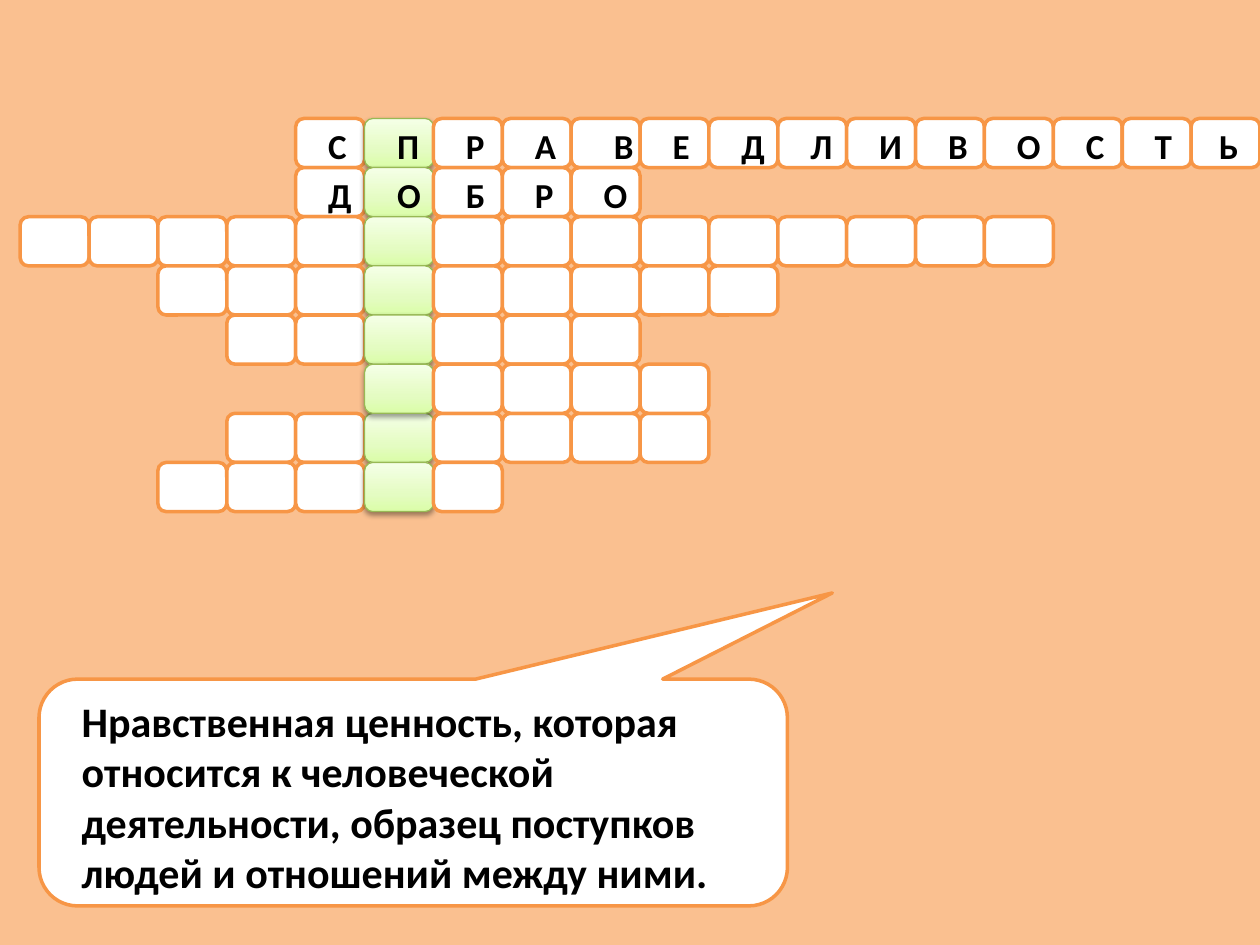
import copy
from dataclasses import dataclass

import pptx
import pptx.dml.color
import pptx.enum.shapes
import pptx.enum.text
import pptx.oxml
import pptx.oxml.ns
import pptx.util

Inches = pptx.util.Inches
Shapes = pptx.enum.shapes.MSO_SHAPE
Align = pptx.enum.text.PP_ALIGN


@dataclass(frozen=True)
class Theme:
    background: str = "FAC090"
    paper: str = "FFFFFF"
    outline: str = "F79646"
    key_outline: str = "98B955"
    key_stops: tuple = ((0, "DAFDA7"), (0.35, "E4FCC2"), (1, "F5FFE7"))
    ink: str = "000000"
    font: str = "Calibri"
    letter_size: int = 20
    clue_size: int = 24
    outline_width: float = 2
    key_outline_width: float = 0.75


@dataclass(frozen=True)
class Box:
    left: float
    top: float
    width: float
    height: float

    def lengths(self):
        return [Inches(v) for v in (self.left, self.top, self.width, self.height)]


THEME = Theme()
COLUMNS = 18
KEY_COLUMN = 5
ROWS = ((4, 14), (4, 5), (0, 15), (2, 9), (3, 6), (5, 5), (3, 7), (2, 5))
STACKING = (0, 1, 2, 3, 4, 6, 7, 5)
WORDS = ("СПРАВЕДЛИВОСТЬ", "ДОБРО")
LETTER_WIDTHS = {(0, 9): 0.31, (0, 11): 0.31, (0, 13): 0.16, (1, 3): 0.31}
LETTER_SHIFTS = {(0, 4): 0.08}
CLUE = (
    "Нравственная ценность, которая относится к человеческой "
    "деятельности, образец поступков людей и отношений между ними."
)
SHADOW = (
    '<a:effectLst xmlns:a="http://schemas.openxmlformats.org/drawingml/2006/main">'
    '<a:outerShdw blurRad="40000" dist="20000" dir="5400000" rotWithShape="0">'
    '<a:srgbClr val="000000"><a:alpha val="38000"/></a:srgbClr>'
    "</a:outerShdw></a:effectLst>"
)


def color(value):
    return pptx.dml.color.RGBColor.from_string(value)


def apply_format(target, values):
    for name, value in values.items():
        setattr(target, name, value)


def add_panel(page, kind, box, outline, width):
    panel = page.shapes.add_shape(kind, *box.lengths())
    panel.shadow.inherit = False
    panel.fill.solid()
    panel.fill.fore_color.rgb = color(THEME.paper)
    panel.line.color.rgb = color(outline)
    panel.line.width = pptx.util.Pt(width)
    return panel


def add_words(page, box, words, size, alignment):
    words_box = page.shapes.add_textbox(*box.lengths())
    frame = words_box.text_frame
    apply_format(frame, {
        "word_wrap": True,
        "auto_size": pptx.enum.text.MSO_AUTO_SIZE.SHAPE_TO_FIT_TEXT,
    })
    para = frame.paragraphs[0]
    para.alignment = alignment
    span = para.add_run()
    span.text = words
    apply_format(span.font, {
        "name": THEME.font, "size": pptx.util.Pt(size), "bold": True,
    })
    span.font.color.rgb = color(THEME.ink)


def add_key_cell(page, box):
    cell = add_panel(page, Shapes.ROUNDED_RECTANGLE, box,
                     THEME.key_outline, THEME.key_outline_width)
    cell.fill.gradient()
    cell.fill.gradient_angle = 90
    properties = cell._element.spPr
    stop_list = properties.find(".//" + pptx.oxml.ns.qn("a:gsLst"))
    stop_list.append(copy.deepcopy(stop_list[0]))
    for stop, (position, value) in zip(cell.fill.gradient_stops, THEME.key_stops):
        stop.position = position
        stop.color.rgb = color(value)
    effects = properties.find(pptx.oxml.ns.qn("a:effectLst"))
    properties.replace(effects, pptx.oxml.parse_xml(SHADOW))


def add_crossword(page, box):
    cell_width = box.width / COLUMNS
    cell_height = box.height / len(ROWS)

    def cell_box(row, column):
        return Box(box.left + column * cell_width, box.top + row * cell_height,
                   cell_width, cell_height)

    for row in STACKING:
        start, count = ROWS[row]
        for column in range(start, start + count):
            place = cell_box(row, column)
            if column == KEY_COLUMN:
                add_key_cell(page, place)
            else:
                add_panel(page, Shapes.ROUNDED_RECTANGLE, place,
                          THEME.outline, THEME.outline_width)

    for row, word in enumerate(WORDS):
        for index, letter in enumerate(word):
            place = cell_box(row, ROWS[row][0] + index)
            left = place.left + 0.16 + LETTER_SHIFTS.get((row, index), 0)
            width = LETTER_WIDTHS.get((row, index), 0.23)
            add_words(page, Box(left, place.top, width, 0.44), letter,
                      THEME.letter_size, Align.CENTER)


def add_clue(page, box):
    bubble = add_panel(page, Shapes.ROUNDED_RECTANGULAR_CALLOUT, box,
                       THEME.outline, THEME.outline_width)
    for index, value in enumerate((0.56, -0.88, 0.17)):
        bubble.adjustments[index] = value
    inner = Box(box.left + 0.24, box.top + 0.08, box.width - 0.47, box.height - 0.08)
    add_words(page, inner, CLUE, THEME.clue_size, Align.LEFT)


def main():
    deck = pptx.Presentation()
    apply_format(deck, {"slide_width": Inches(10), "slide_height": Inches(7.5)})
    page = deck.slides.add_slide(deck.slide_layouts[6])
    page.background.fill.solid()
    page.background.fill.fore_color.rgb = color(THEME.background)
    add_crossword(page, Box(0.16, 0.94, 9.84, 3.12))
    add_clue(page, Box(0.31, 5.39, 5.94, 1.8))
    deck.save("out.pptx")


if __name__ == "__main__":
    main()
